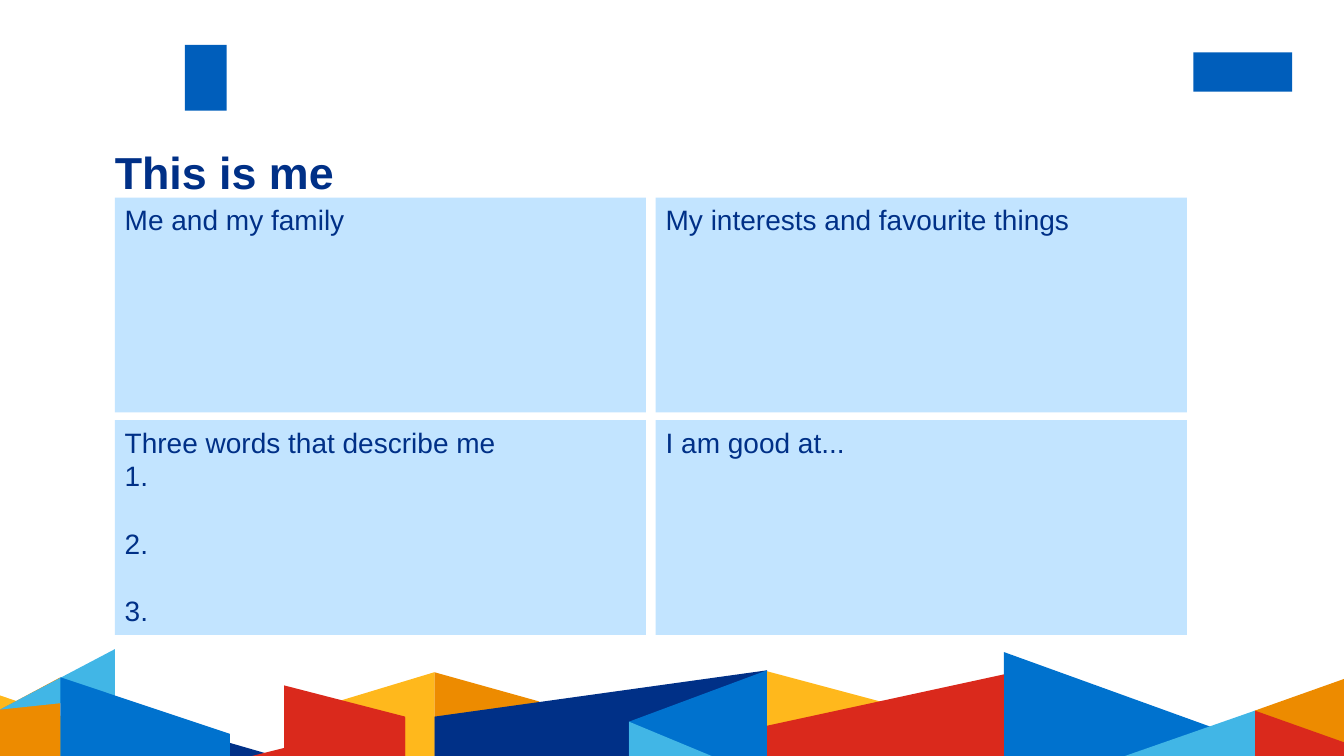
"""Build the "This is me" worksheet slide with four answer boxes above a folded-paper border."""
from pptx import Presentation
from pptx.dml.color import RGBColor
from pptx.enum.shapes import MSO_SHAPE
from pptx.enum.text import MSO_ANCHOR, PP_ALIGN
from pptx.util import Pt

NAVY, BLUE, SKY, PALE = "003087", "0072CE", "41B6E6", "C2E4FF"
RED, ORANGE, YELLOW, BADGE = "DA291C", "ED8B00", "FFB81C", "005EBB"
BOTTOM = 540


def paint(shape, colour):
    shape.shadow.inherit = False
    shape.fill.solid()
    shape.fill.fore_color.rgb = RGBColor.from_string(colour)
    shape.line.fill.background()


def write(para, text, size, bold=False):
    para.alignment = PP_ALIGN.LEFT
    span = para.add_run()
    span.text = text
    span.font.color.rgb = RGBColor.from_string(NAVY)
    looks = {"name": "Arial", "size": Pt(size), "bold": bold}
    for name, value in looks.items():
        setattr(span.font, name, value)


deck = Presentation()
deck.slide_width, deck.slide_height = Pt(960), Pt(BOTTOM)
page = deck.slides.add_slide(deck.slide_layouts[6])

badges = [(132, 32, 30, 47), (852.5, 37.5, 70.5, 28)]
for badge in badges:
    paint(page.shapes.add_shape(MSO_SHAPE.RECTANGLE, *map(Pt, badge)), BADGE)

# colour, left, top at left, right, top at right, bottom at left, bottom at right
panels = [
    (ORANGE, 310.3, 480.2, 385.2, 501.1, BOTTOM, 519.1),
    (NAVY, 310.3, 511.9, 547.9, 478.8, BOTTOM, BOTTOM),
    (ORANGE, 896.4, 507.6, 960, 485, BOTTOM, BOTTOM),
    (YELLOW, 0, 496.8, 68.4, 519.8, BOTTOM, BOTTOM),
    (YELLOW, 203, 512.6, 310.3, 480.2, BOTTOM, BOTTOM),
    (ORANGE, 0, 506.9, 43.2, 483.8, BOTTOM, BOTTOM),
    (RED, 203, 489.6, 289.4, 511.9, BOTTOM, BOTTOM),
    (NAVY, 126.7, 519.8, 196.6, BOTTOM, BOTTOM, BOTTOM),
    (RED, 180, BOTTOM, 289.4, 512.6, BOTTOM, BOTTOM),
    (SKY, 0, 506.9, 82.1, 463.7, 506.9, 498.2),
    (BLUE, 43.2, 483.8, 164.2, 524.2, BOTTOM, BOTTOM),
    (BLUE, 449.3, 515.5, 547.9, 478.8, BOTTOM, BOTTOM),
    (SKY, 449.3, 515.5, 508.3, BOTTOM, BOTTOM, BOTTOM),
    (BLUE, 717.1, 465.8, 896.4, 530.6, BOTTOM, BOTTOM),
    (RED, 896.4, 507.6, 960, 530.2, BOTTOM, BOTTOM),
    (SKY, 803.5, BOTTOM, 896.4, 507.6, BOTTOM, BOTTOM),
    (YELLOW, 547.9, 479.5, 642.2, 504.7, BOTTOM, BOTTOM),
    (RED, 547.9, 518.4, 717.1, 481.7, BOTTOM, BOTTOM),
]
for colour, left, left_top, right, right_top, left_bottom, right_bottom in panels:
    outline = page.shapes.build_freeform(Pt(left), Pt(left_top), scale=1)
    corners = [(right, right_top), (right, right_bottom), (left, left_bottom)]
    outline.add_line_segments([(Pt(x), Pt(y)) for x, y in corners])
    paint(outline.convert_to_shape(), colour)

title = page.shapes.add_textbox(Pt(82), Pt(103.7), Pt(788), Pt(43.2)).text_frame
frame_settings = {"word_wrap": True, "vertical_anchor": MSO_ANCHOR.MIDDLE, "margin_left": 0,
                  "margin_right": 0, "margin_top": 0, "margin_bottom": 0}
for name, value in frame_settings.items():
    setattr(title, name, value)
title.paragraphs[0].line_spacing = 0.9
write(title.paragraphs[0], "This is me", 32, bold=True)

answers = [
    ["Me and my family"],
    ["My interests and favourite things"],
    ["Three words that describe me", "1.", "2.", "3."],
    ["I am good at..."],
]
for index, lines in enumerate(answers):
    row, column = divmod(index, 2)
    box = page.shapes.add_shape(MSO_SHAPE.RECTANGLE, Pt(82 + column * 386.4),
                                Pt(141.2 + row * 159), Pt(379.4), Pt(153.4))
    paint(box, PALE)
    box.text_frame.word_wrap = True
    box.text_frame.vertical_anchor = MSO_ANCHOR.TOP
    for number, line in enumerate(lines):
        para = box.text_frame.add_paragraph() if number else box.text_frame.paragraphs[0]
        para.space_before = Pt(24 if number > 1 else 0)
        write(para, line, 20)

deck.save("out.pptx")
